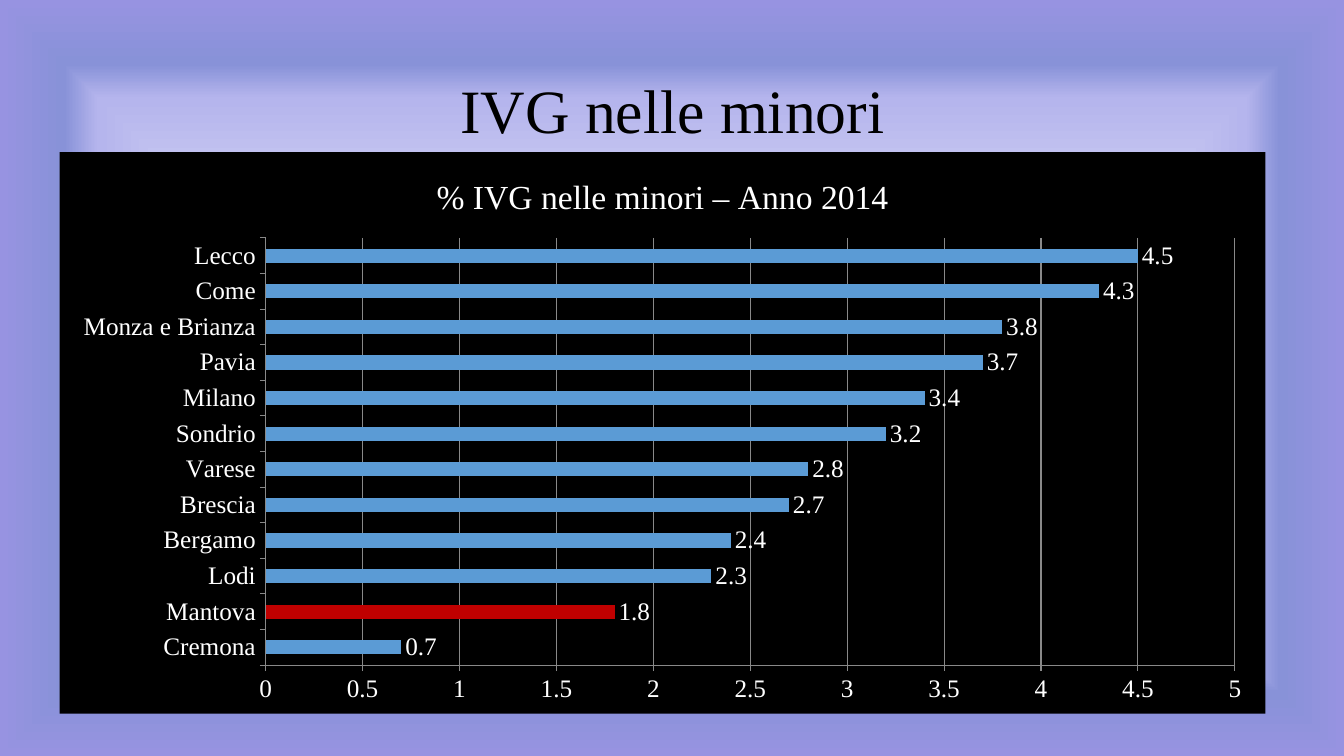
from lxml import etree
from pptx import Presentation
from pptx.chart.data import CategoryChartData
from pptx.dml.color import RGBColor
from pptx.enum.chart import XL_CHART_TYPE as ChartType, XL_LABEL_POSITION as LabelPosition
from pptx.enum.chart import XL_TICK_MARK as TickMark
from pptx.enum.text import MSO_ANCHOR as Anchor, PP_ALIGN as Align
from pptx.oxml import parse_xml
from pptx.oxml.ns import nsdecls, qn
from pptx.util import Inches, Pt

FONT = "Times New Roman"
TITLE = "IVG nelle minori"
CHART_TITLE = "% IVG nelle minori – Anno 2014"
RATES = {
    "Cremona": 0.7, "Mantova": 1.8, "Lodi": 2.3, "Bergamo": 2.4,
    "Brescia": 2.7, "Varese": 2.8, "Sondrio": 3.2, "Milano": 3.4,
    "Pavia": 3.7, "Monza e Brianza": 3.8, "Come": 4.3, "Lecco": 4.5,
}
HIGHLIGHT = "Mantova"
BLACK, WHITE, GREY, BLUE, RED = "000000", "FFFFFF", "898989", "5B9BD5", "C00000"
BACKGROUND_STOPS = [(0, "F7FAFD"), (74, "B5B5ED"), (83, "8892D8"), (100, "9793E1")]


def rgb(color):
    return RGBColor.from_string(color)


def style_font(font, size, color):
    font.name = FONT
    font.size = Pt(size)
    font.bold = False
    font.color.rgb = rgb(color)


def paint_background(page):
    page.background.fill.solid()
    properties = page.element.cSld.find(qn("p:bg")).find(qn("p:bgPr"))
    properties.remove(properties[0])
    stops = "".join(
        f'<a:gs pos="{position * 1000}"><a:srgbClr val="{color}"/></a:gs>'
        for position, color in BACKGROUND_STOPS)
    properties.insert(0, parse_xml(
        f'<a:gradFill {nsdecls("a")} rotWithShape="1"><a:gsLst>{stops}</a:gsLst>'
        '<a:path path="shape"><a:fillToRect l="50000" t="50000" r="50000" b="50000"/>'
        '</a:path></a:gradFill>'))


def add_title(page):
    title = page.shapes.title
    title.left, title.top = Inches(0.92), Inches(0.4)
    title.width, title.height = Inches(11.5), Inches(1.45)
    frame = title.text_frame
    frame.text = TITLE
    frame.vertical_anchor = Anchor.MIDDLE
    para = frame.paragraphs[0]
    para.alignment = Align.CENTER
    para.line_spacing = 0.9
    style_font(para.runs[0].font, 44, BLACK)


def fill_chart(chart, color):
    area = parse_xml(
        f'<c:spPr {nsdecls("c", "a")}><a:solidFill><a:srgbClr val="{color}"/></a:solidFill>'
        '<a:ln><a:noFill/></a:ln></c:spPr>')
    chart.element.find(qn("c:chart")).addnext(area)


def add_rates_chart(page):
    data = CategoryChartData()
    data.categories = list(RATES)
    data.add_series("Series 1", list(RATES.values()))
    chart = page.shapes.add_chart(
        ChartType.BAR_CLUSTERED, Inches(0.59), Inches(1.51), Inches(11.96), Inches(5.57), data).chart
    style_font(chart.font, 18, WHITE)
    fill_chart(chart, BLACK)
    chart.has_legend = False
    chart.has_title = True
    heading = chart.chart_title.text_frame
    heading.text = CHART_TITLE
    style_font(heading.paragraphs[0].runs[0].font, 24, WHITE)
    chart.chart_title.include_in_layout = False

    for axis in (chart.category_axis, chart.value_axis):
        axis.major_tick_mark = TickMark.OUTSIDE
        axis.minor_tick_mark = TickMark.NONE
        axis.format.line.color.rgb = rgb(GREY)
        style_font(axis.tick_labels.font, 18, WHITE)
    chart.category_axis.has_major_gridlines = False
    values = chart.value_axis
    values.minimum_scale, values.maximum_scale, values.major_unit = 0, 5, 0.5
    values.has_major_gridlines = True
    values.major_gridlines.format.line.color.rgb = rgb(GREY)

    plot = chart.plots[0]
    plot.gap_width = 150
    plot.vary_by_categories = False
    plot.has_data_labels = True
    labels = plot.data_labels
    labels.show_value = True
    labels.position = LabelPosition.OUTSIDE_END
    style_font(labels.font, 18, WHITE)
    series = plot.series[0]
    bar_fills = [(series, BLUE), (series.points[list(RATES).index(HIGHLIGHT)], RED)]
    for bar, color in bar_fills:
        bar.format.fill.solid()
        bar.format.fill.fore_color.rgb = rgb(color)


def main():
    deck = Presentation()
    deck.slide_width, deck.slide_height = Inches(13.33), Inches(7.5)
    page = deck.slides.add_slide(deck.slide_layouts[5])
    paint_background(page)
    add_title(page)
    add_rates_chart(page)
    deck.save("out.pptx")


if __name__ == "__main__":
    main()
